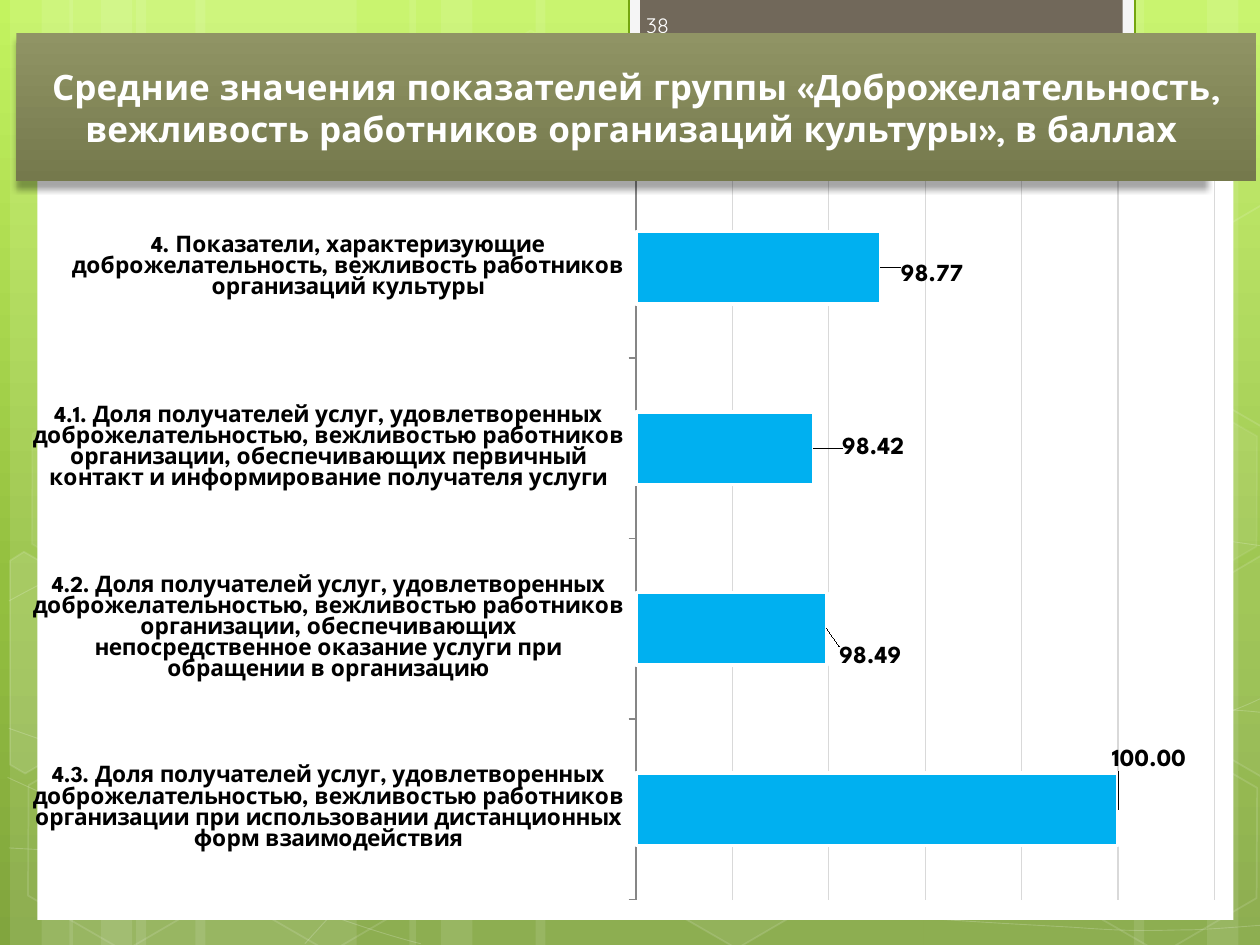
from copy import deepcopy

from lxml import etree
from pptx import Presentation
from pptx.chart.data import CategoryChartData
from pptx.dml.color import RGBColor
from pptx.enum.chart import XL_CHART_TYPE, XL_LABEL_POSITION, XL_TICK_MARK
from pptx.enum.shapes import MSO_SHAPE
from pptx.enum.text import MSO_ANCHOR, MSO_AUTO_SIZE, PP_ALIGN
from pptx.oxml import parse_xml
from pptx.oxml.ns import nsdecls, qn
from pptx.util import Inches, Pt

RECTANGLE, HEXAGON = MSO_SHAPE.RECTANGLE, MSO_SHAPE.HEXAGON
MIDDLE, CENTER = MSO_ANCHOR.MIDDLE, PP_ALIGN.CENTER
NO_AUTOFIT = MSO_AUTO_SIZE.NONE
BAR, OUTSIDE_END = XL_CHART_TYPE.BAR_CLUSTERED, XL_LABEL_POSITION.OUTSIDE_END
TICK_OUT = XL_TICK_MARK.OUTSIDE

COLORS = {"white": "FFFFFF", "black": "000000", "green": "74A510", "tab": "71685A",
          "tab frame": "F5F5F5", "number": "FEFEFE", "bar": "00B0F0",
          "grid": "D9D9D9", "axis": "868686"}
BACKGROUND = [(0, "C3F35F"), (0.62, "93BF3F"), (1, "81A53E")]
TITLE_FILL = [(0, "909465"), (1, "75794C")]
TITLE = ("Средние значения показателей группы «Доброжелательность, "
         "вежливость работников организаций культуры», в баллах ")
SERVED = ("Доля получателей услуг, удовлетворенных доброжелательностью, "
          "вежливостью работников организации")
SCORES = [
    ("4. Показатели, характеризующие доброжелательность, вежливость работников "
     "организаций культуры", 98.77, (0.12, 0.06)),
    (f"4.1. {SERVED}, обеспечивающих первичный контакт и информирование "
     "получателя услуги", 98.42, (0.19, 0)),
    (f"4.2. {SERVED}, обеспечивающих непосредственное оказание услуги при "
     "обращении в организацию", 98.49, (0.06, 0.23)),
    (f"4.3. {SERVED} при использовании дистанционных форм взаимодействия",
     100, (-0.09, -0.39)),
]
CHART_WIDTH, CHART_HEIGHT = 9.53, 6.04
PLOT_PLACE, PLOT_SIZE = (4.77, 0.15), (4.61, 5.73)
STRIPES = [(1.08, 1.75), (0.08, 0.5), (0.33, 0.83), (1.55, 1.75), (0.55, 0.5), (0.8, 0.83),
           (7.33, 1.75), (9.58, 0.5), (9, 0.83), (4.25, 3.08), (3.25, 0.5), (3.5, 0.83)]
CURVES = [
    [(0.07, 6.73), (0.61, 6.76), (1.15, 6.79), (1.9, 6.78), (2.65, 6.77), (3.58, 6.75),
     (4.58, 6.65), (5.58, 6.55), (7, 6.36), (7.92, 6.17), (8.83, 5.98), (9.77, 5.68),
     (10.07, 5.51)],
    [(0.07, 4.77), (0.36, 4.61), (0.65, 4.46), (1.21, 4.31), (1.78, 4.16), (2.59, 3.94),
     (3.47, 3.87), (4.36, 3.8), (5.44, 3.79), (6.54, 3.87), (7.64, 3.95), (9.47, 4.26),
     (10.07, 4.34)],
    [(0.06, 6.17), (1.27, 6.72), (2.47, 7.27), (3.34, 7.49)],
    [(0.07, 5.78), (0.38, 5.89), (0.7, 6), (1.28, 6.16), (1.86, 6.31), (2.73, 6.56),
     (3.57, 6.73), (4.4, 6.9), (5.45, 7.08), (6.28, 7.18), (7.11, 7.29), (8, 7.33),
     (8.53, 7.36), (9.05, 7.4), (9.19, 7.38), (9.45, 7.38), (9.71, 7.37), (9.89, 7.35),
     (10.07, 7.34)],
    [(2.42, 7.49), (2.6, 7.29), (2.78, 7.09), (3.02, 6.91), (3.26, 6.73), (3.6, 6.53),
     (3.88, 6.39), (4.16, 6.25), (4.33, 6.19), (4.7, 6.09), (5.06, 5.99), (5.73, 5.85),
     (6.08, 5.78), (6.44, 5.71), (6.49, 5.71), (6.8, 5.69), (7.11, 5.66), (7.6, 5.63),
     (7.94, 5.62), (8.29, 5.61), (8.86, 5.62), (8.86, 5.62), (9.08, 5.62), (9.31, 5.62),
     (9.53, 5.62), (9.71, 5.63), (9.88, 5.64), (9.97, 5.65), (10.06, 5.66), (10.03, 5.65),
     (10.06, 5.66)],
]
HEXAGONS = [(3.34, 0.36, 4, 8), (4.97, 5.89, 6, 12), (0.11, 5.91, 0, 12), (0.14, 3.12, 7, 8),
            (1.74, 5.92, 0, 12), (7.53, 4.53, 10, 12), (8.34, 5.93, 0, 12), (8.34, 3.14, 7, 8)]
CUT_HEXAGONS = [
    ([(0.08, 4.45), (0.19, 4.38), (0.96, 4.82), (0.95, 5.7), (0.2, 6.14), (0.08, 6.07)], 10),
    ([(9.26, 4.85), (10.01, 4.41), (10.09, 4.46), (10.09, 6.13), (10.02, 6.17), (9.26, 5.73)], 4),
    ([(9.26, 2.07), (10.01, 1.63), (10.1, 1.68), (10.09, 3.35), (10.02, 3.39), (9.26, 2.95)], 0),
]
PANELS = [((0.5, 0.36, 9, 6.76), "white", "black", 0.5),
          ((4.99, -0.02, 4.02, 0.76), "tab frame", "green", 1.25),
          ((5.08, -0.02, 3.83, 0.68), "tab", None, 0)]


def paint(fill, name, opacity=100):
    if not opacity:
        fill.background()
        return
    fill.solid()
    fill.fore_color.rgb = RGBColor.from_string(COLORS[name])
    if opacity < 100:
        color = fill._xPr.find(qn("a:solidFill"))[0]
        etree.SubElement(color, qn("a:alpha")).set("val", str(opacity * 1000))


def paint_gradient(fill, stops):
    fill.gradient()
    fill.gradient_angle = 270
    first = fill.gradient_stops[0]._gs
    for _ in stops[2:]:
        first.addnext(deepcopy(first))
    for stop, (position, color) in zip(fill.gradient_stops, stops):
        stop.position = position
        stop.color.rgb = RGBColor.from_string(color)


def style(shape, fill, opacity=100, line=None, width=0, line_opacity=100):
    shape.shadow.inherit = False
    paint(shape.fill, fill, opacity)
    paint(shape.line.fill, line, line_opacity if line else 0)
    if line:
        shape.line.width = Pt(width)


def set_font(font, family, size, color, bold=False):
    font.name, font.size, font.bold = family, Pt(size), bold
    font.color.rgb = RGBColor.from_string(COLORS[color])


def add_outline(shapes, points, close):
    corners = [(Inches(x), Inches(y)) for x, y in points]
    builder = shapes.build_freeform(*corners[0], scale=1.0)
    builder.add_line_segments(corners[1:], close=close)
    return builder.convert_to_shape()


def add_curve(shapes, knots):
    curve = add_outline(shapes, knots, False)
    outline = curve._element.find(".//" + qn("a:path"))
    segments = outline.findall(qn("a:lnTo"))
    for start in range(0, len(segments), 3):
        bend = etree.SubElement(outline, qn("a:cubicBezTo"))
        for segment in segments[start:start + 3]:
            bend.append(segment[0])
            outline.remove(segment)
    return curve


def manual_layout(x, y, extra=""):
    return parse_xml(f'<c:layout {nsdecls("c")}><c:manualLayout>{extra}'
                     f'<c:x val="{x / CHART_WIDTH}"/><c:y val="{y / CHART_HEIGHT}"/>'
                     '</c:manualLayout></c:layout>')


def add_backdrop(slide):
    paint_gradient(slide.background.fill, BACKGROUND)
    shapes = slide.shapes
    for left, width in STRIPES:
        style(shapes.add_shape(RECTANGLE, Inches(left), 0, Inches(width), Inches(7.5)), "white", 10)
    for knots in CURVES:
        style(add_curve(shapes, knots), "white", 0, "white", 0.5, 20)
    for left, top, opacity, line_opacity in HEXAGONS:
        hexagon = shapes.add_shape(HEXAGON, Inches(left), Inches(top), Inches(1.75), Inches(1.52))
        hexagon.rotation = 30
        hexagon.adjustments[0], hexagon.adjustments[1] = 0.285, 1.155
        style(hexagon, "white", opacity, "white", 1, line_opacity)
    for corners, opacity in CUT_HEXAGONS:
        style(add_outline(shapes, corners, True), "white", opacity, "white", 1, 12)
    for place, fill, line, width in PANELS:
        style(shapes.add_shape(RECTANGLE, *map(Inches, place)), fill, 100, line, width)
    box = shapes.add_textbox(Inches(5.03), 0, Inches(1.46), Inches(0.4))
    box.text_frame.word_wrap = True
    box.text_frame.vertical_anchor = MIDDLE
    box.text_frame.text = "38"
    set_font(box.text_frame.paragraphs[0].runs[0].font, "Quicksand", 12, "number")


def add_score_chart(slide):
    data = CategoryChartData(number_format="0.00")
    data.categories = [label for label, _, _ in SCORES]
    data.add_series("Series 1", [value for _, value, _ in SCORES])
    place = map(Inches, (0.26, 1.26, CHART_WIDTH, CHART_HEIGHT))
    chart = slide.shapes.add_chart(BAR, *place, data).chart
    chart.has_legend = chart.has_title = False
    set_font(chart.font, "League Spartan", 14, "black", True)
    chart._chartSpace.find(qn("c:chart")).addnext(parse_xml(
        f'<c:spPr {nsdecls("c", "a")}><a:solidFill><a:srgbClr val="{COLORS["white"]}"/>'
        '</a:solidFill><a:ln><a:noFill/></a:ln></c:spPr>'))

    plot_area = chart._chartSpace.find(".//" + qn("c:plotArea"))
    for old in plot_area.findall(qn("c:layout")):
        plot_area.remove(old)
    layout = manual_layout(*PLOT_PLACE, '<c:layoutTarget val="inner"/>'
                           '<c:xMode val="edge"/><c:yMode val="edge"/>')
    for tag, size, whole in zip(("c:w", "c:h"), PLOT_SIZE, (CHART_WIDTH, CHART_HEIGHT)):
        etree.SubElement(layout[0], qn(tag)).set("val", str(size / whole))
    plot_area.insert(0, layout)

    categories, values = chart.category_axis, chart.value_axis
    categories.reverse_order = True
    categories.major_tick_mark = TICK_OUT
    set_font(categories.tick_labels.font, "League Spartan", 13, "black", True)
    paint(categories.format.line.fill, "axis")
    values.minimum_scale, values.maximum_scale, values.major_unit = 97.5, 100.5, 0.5
    values.visible = False
    values.has_major_gridlines = True
    paint(values.major_gridlines.format.line.fill, "grid")
    values.major_gridlines.format.line.width = Pt(0.75)

    plot = chart.plots[0]
    plot.gap_width, plot.vary_by_categories = 150, False
    series = plot.series[0]
    paint(series.format.fill, "bar")
    paint(series.format.line.fill, "white")
    series.format.line.width = Pt(2)
    labels = series.data_labels
    labels.show_value = True
    labels.number_format, labels.number_format_is_linked = "0.00", False
    for index, (_, _, offset) in enumerate(SCORES):
        label = series.points[index].data_label
        set_font(label.font, "League Spartan", 14, "black", True)
        label.position = OUTSIDE_END
        label._get_or_add_dLbl().find(qn("c:idx")).addnext(manual_layout(*offset))
    labels._element.append(parse_xml(
        f'<c:extLst {nsdecls("c")}><c:ext uri="{{CE6537A1-D6FC-4f65-9D91-7224C49458BB}}" '
        'xmlns:c15="http://schemas.microsoft.com/office/drawing/2012/chart">'
        '<c15:showLeaderLines val="0"/></c:ext></c:extLst>'))


def add_title(slide):
    title = slide.shapes.title
    slide.shapes._spTree.append(title._element)
    title.left, title.top, title.width, title.height = map(Inches, (0.13, 0.26, 9.84, 1.18))
    paint_gradient(title.fill, TITLE_FILL)
    title._element.spPr.append(parse_xml(
        f'<a:effectLst {nsdecls("a")}><a:outerShdw blurRad="{Pt(3.5)}" dist="{Pt(4)}" '
        'dir="5400000" sx="96000" algn="ctr" rotWithShape="0">'
        f'<a:srgbClr val="{COLORS["black"]}">'
        '<a:alpha val="34000"/></a:srgbClr></a:outerShdw></a:effectLst>'))
    frame = title.text_frame
    frame.text = TITLE
    frame.word_wrap, frame.auto_size, frame.vertical_anchor = True, NO_AUTOFIT, MIDDLE
    frame.paragraphs[0].alignment = CENTER
    set_font(frame.paragraphs[0].runs[0].font, "Quicksand", 20, "white", True)


def main():
    deck = Presentation()
    deck.slide_width, deck.slide_height = Inches(10), Inches(7.5)
    slide = deck.slides.add_slide(deck.slide_layouts[5])
    add_backdrop(slide)
    add_score_chart(slide)
    add_title(slide)
    deck.save("out.pptx")


if __name__ == "__main__":
    main()
